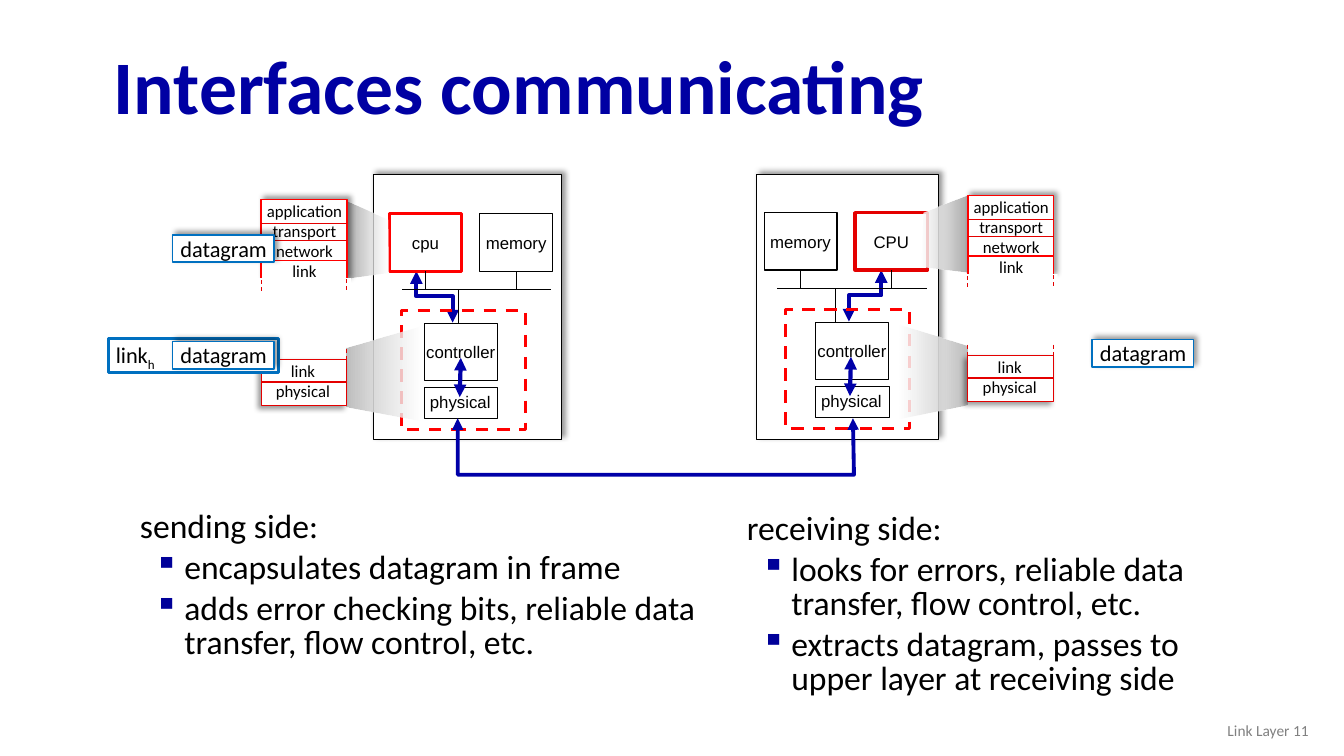
from lxml.etree import SubElement as Sub
from pptx import Presentation
from pptx.dml.color import RGBColor
from pptx.enum.dml import MSO_LINE
from pptx.enum.shapes import MSO_CONNECTOR, MSO_SHAPE
from pptx.enum.text import MSO_ANCHOR, PP_ALIGN
from pptx.oxml.ns import qn
from pptx.util import Inches, Pt

BLACK, WHITE, GREY = "000000", "FFFFFF", "808080"
NAVY, BLUE, SKY = "0000A3", "0000A8", "0070C0"
RED, CRIM, MARK = "FF0000", "E40000", "000099"

TITLE = "Interfaces communicating"
FOOT = "Link Layer 11"
UPPER = ["application", "transport", "network", "link"]
LOWER = ["link", "physical"]
NOTES = [
    ((1.29, 5.02, 5.74, 2.12), "sending side:",
     ["encapsulates datagram in frame",
      "adds error checking bits, reliable data transfer, flow control, etc."]),
    ((7.31, 5.04, 5.28, 2.02), "receiving side:",
     ["looks for errors, reliable data transfer, flow control, etc.",
      "extracts datagram, passes to upper layer at receiving side"]),
]
HOSTS = [
    {"frame": (7.5, 1.73, 1.81, 2.63), "bus": (7.71, 2.86), "chip": 0.38,
     "drop": 0.58, "dash": 0.08, "jag": (1.03, 0.71), "link": 0.73,
     "cards": [("memory", BLACK, 1), ("CPU", CRIM, 2.25)]},
    {"frame": (3.7, 1.73, 1.87, 2.63), "bus": (3.99, 2.87), "chip": 0.22,
     "drop": 0.56, "dash": -0.01, "jag": (0.14, 0.5), "link": 0.58,
     "cards": [("cpu", RED, 2.25), ("memory", BLACK, 0.75)]},
]
STACKS = [
    {"at": (2.59, 1.98), "flip": False, "ends": [0.85],
     "low": ([(4.16, 3.24), (3.44, 3.45), (3.44, 4.03), (4.17, 4.17)], 74),
     "top": ([(3.84, 2.18), (3.43, 1.99), (3.43, 2.76), (3.85, 2.7)], 66)},
    {"at": (9.6, 1.94), "flip": True, "ends": [0, 0.85],
     "low": ([(8.92, 3.22), (9.6, 3.43), (9.6, 4.01), (8.92, 4.15)], 82),
     "top": ([(9.16, 2.11), (9.62, 1.93), (9.62, 2.7), (9.14, 2.64)], 81)},
]
WIRE = [(4.54, 4.15), (4.54, 4.71), (8.47, 4.71), (8.46, 4.15)]
GRAMS = [(1.71, 3.39), (1.71, 2.33), (10.83, 3.37)]

deck = Presentation()
deck.slide_width, deck.slide_height = Inches(13.33), Inches(7.5)
page = deck.slides.add_slide(deck.slide_layouts[6])
shapes = page.shapes


def tint(hue):
    return RGBColor.from_string(hue)


def props(item):
    return item._element.find(qn("p:spPr"))


def pen(item, hue, width, dash=False, heads=False):
    item.line.color.rgb = tint(hue)
    item.line.width = Pt(width)
    if dash:
        item.line.dash_style = MSO_LINE.DASH
    if heads:
        for end in ("a:headEnd", "a:tailEnd"):
            Sub(props(item).find(qn("a:ln")), qn(end), type="triangle")


def write(para, text, size, hue=BLACK, font="Calibri", bold=False):
    run = para.add_run()
    run.text = text
    run.font.name, run.font.size, run.font.bold = font, Pt(size), bold
    run.font.color.rgb = tint(hue)
    return run


def rect(box, hue=None, width=0.75, fill=WHITE, dash=False, cast=None):
    item = shapes.add_shape(MSO_SHAPE.RECTANGLE, *map(Inches, box))
    item.shadow.inherit = False
    if fill:
        item.fill.solid()
        item.fill.fore_color.rgb = tint(fill)
    else:
        item.fill.background()
    if hue:
        pen(item, hue, width, dash)
    else:
        item.line.fill.background()
    if cast is not None:
        fx = Sub(props(item).find(qn("a:effectLst")), qn("a:outerShdw"),
                 blurRad=str(Pt(4)), dist=str(Pt(3)), dir=str(cast * 60000),
                 algn="tl", rotWithShape="0")
        Sub(Sub(fx, qn("a:srgbClr"), val=BLACK), qn("a:alpha"), val="40000")
    return item


def label(item, text):
    frame = item.text_frame
    frame.word_wrap = False
    frame.vertical_anchor = MSO_ANCHOR.MIDDLE
    para = frame.paragraphs[0]
    para.alignment = PP_ALIGN.CENTER
    write(para, text, 12, font="Arial")


def area(box, wrap=True, anchor=MSO_ANCHOR.TOP):
    frame = shapes.add_textbox(*map(Inches, box)).text_frame
    frame.word_wrap = wrap
    frame.vertical_anchor = anchor
    return frame


def rows(box, words, font="Calibri"):
    frame = area(box, False)
    for n, word in enumerate(words):
        para = frame.add_paragraph() if n else frame.paragraphs[0]
        para.alignment = PP_ALIGN.CENTER
        write(para, word, 12, font=font)


def line(x1, y1, x2, y2, hue=BLACK, width=0.75, dash=False, heads=False):
    item = shapes.add_connector(MSO_CONNECTOR.STRAIGHT, *map(Inches, (x1, y1, x2, y2)))
    pen(item, hue, width, dash, heads)
    Sub(props(item), qn("a:effectLst"))
    return item


def form(spots, close):
    spots = [(Inches(x), Inches(y)) for x, y in spots]
    maker = shapes.build_freeform(*spots[0])
    maker.add_line_segments(spots[1:], close=close)
    item = maker.convert_to_shape()
    item.shadow.inherit = False
    return item


def route(spots, width):
    item = form(spots, False)
    item.fill.background()
    pen(item, BLUE, width, heads=True)


def beam(spots, alpha, hue, flip):
    item = form(spots, True)
    item.line.fill.background()
    item.fill.gradient()
    item.fill.gradient_angle = 0
    dark, pale = list(item.fill.gradient_stops)[::-1 if flip else 1]
    dark.color.rgb, pale.color.rgb = tint(hue), tint(WHITE)
    for clr in props(item).iter(qn("a:srgbClr")):
        if clr.get("val") == WHITE:
            Sub(clr, qn("a:alpha"), val=str(alpha * 1000))


def host(h):
    x, y = h["bus"]
    chip = x + h["chip"]
    rect(h["frame"], BLACK, cast=315)
    rect((chip, y + 0.97, 0.73, 0.31), BLACK)
    label(rect((chip, y + 0.34, 0.72, 0.57), BLACK), "controller")
    rows((chip - 0.05, y + 0.97, 0.81, 0.5), ["physical"], "Arial")
    a, b = (x + d for d in h["jag"])
    route([(a, y - 0.18), (a, y + 0.07), (b, y + 0.07), (b, y + 0.33)], 3)
    line(x, y, x + 1.48, y)
    line(x + h["drop"], y + 0.34, x + h["drop"], y)
    for n, (name, hue, width) in enumerate(h["cards"]):
        left = x - 0.13 + n * 0.9
        card = rect((left, y - 0.75, 0.72, 0.57), hue, width)
        label(card, name)
        line(left + 0.36, y - 0.18, left + 0.36, y).begin_connect(card, 2)
    mid = x + h["link"]
    line(mid, y + 0.68, mid - 0.01, y + 1.07, BLUE, 3, heads=True)
    rect((x + h["dash"], y + 0.21, 1.23, 1.18), RED, 2.25, None, True)


def stack(s):
    x, y = s["at"]
    beam(*s["low"], "BFBFBF", s["flip"])
    rect((x, y + 1.59, 0.85, 0.45), CRIM, cast=135)
    beam(*s["top"], "A6A6A6", s["flip"])
    rect((x, y, 0.85, 0.8), RED, 1, cast=315)
    rows((x - 0.05, y - 0.04, 0.96, 0.91), UPPER)
    for dy, hue in ((0.24, CRIM), (0.41, CRIM), (0.6, RED), (1.81, CRIM)):
        line(x, y + dy, x + 0.85, y + dy, hue)
    rect((x - 0.07, y + 0.78, 0.96, 0.2))
    rows((x + 0.04, y + 1.55, 0.75, 0.51), LOWER)
    for dx, dy in [(0, 0.8), (0.85, 0.79)] + [(d, 1.48) for d in s["ends"]]:
        line(x + dx, y + dy, x + dx, y + dy + 0.11, CRIM, dash=True)


def note(box, head, points):
    frame = area(box)
    for n, text in enumerate([head] + points):
        para = frame.add_paragraph() if n else frame.paragraphs[0]
        para.line_spacing = 0.85
        if n:
            para.space_before = Pt(4.8)
            ppr = para._p.get_or_add_pPr()
            ppr.set("marL", str(Inches(0.44)))
            ppr.set("indent", str(Inches(-0.3)))
            Sub(Sub(ppr, qn("a:buClr")), qn("a:srgbClr"), val=MARK)
            Sub(ppr, qn("a:buChar"), char="▪")
        write(para, text, 24)


para = area((1.03, 0.4, 11.5, 0.98), anchor=MSO_ANCHOR.MIDDLE).paragraphs[0]
para.line_spacing = 0.9
write(para, TITLE, 54, NAVY, bold=True)
for h in HOSTS:
    host(h)
for s in STACKS:
    stack(s)
route(WIRE, 2.75)
for n in NOTES:
    note(*n)
rect((1.08, 3.36, 1.68, 0.34), SKY, 2)
para = area((1.05, 3.34, 0.67, 0.37)).paragraphs[0]
write(para, "link", 16)
write(para, "h", 16)._r.get_or_add_rPr().set("baseline", "-25000")
for x, y in GRAMS:
    rect((x, y, 1.01, 0.27), SKY, 1, cast=315)
    write(area((x - 0.02, y - 0.05, 1.15, 0.37)).paragraphs[0], "datagram", 16)
para = area((10.08, 7.05, 3, 0.4), anchor=MSO_ANCHOR.MIDDLE).paragraphs[0]
para.alignment = PP_ALIGN.RIGHT
write(para, FOOT, 11, GREY)
deck.save("out.pptx")
